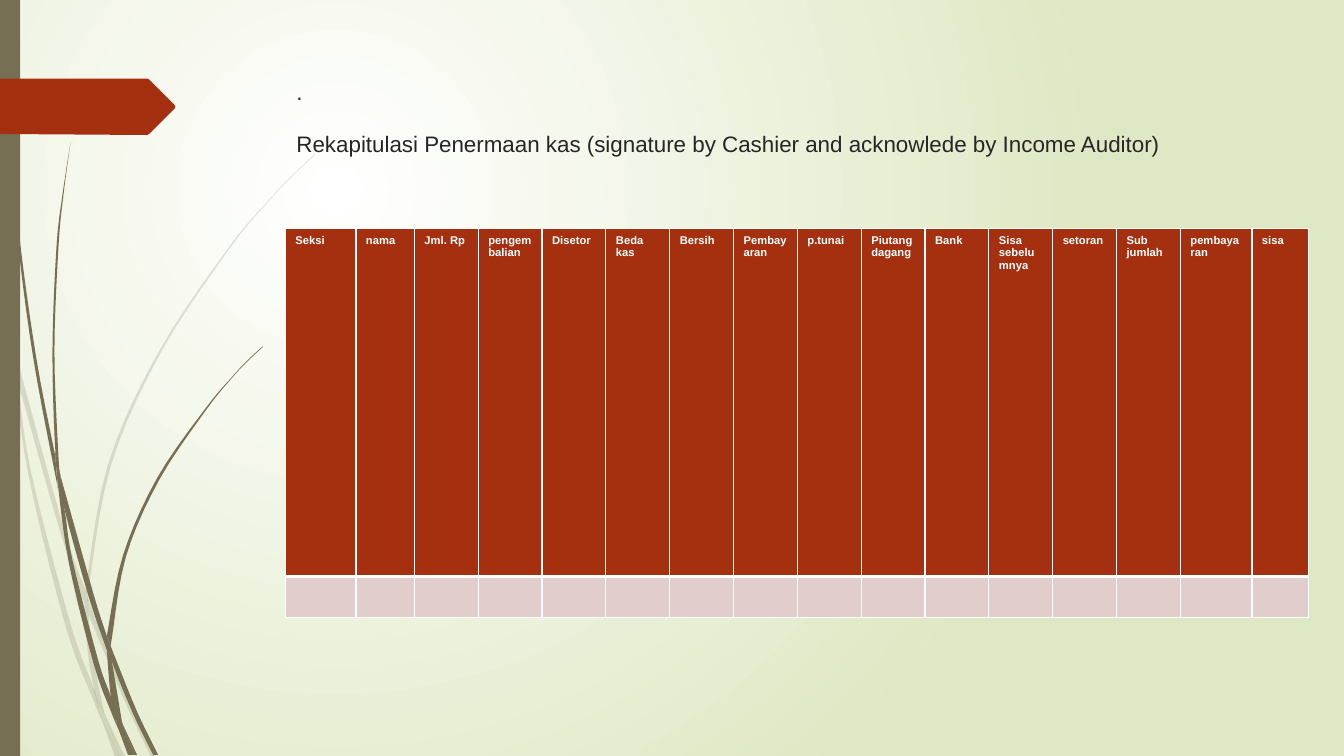
import pptx
import pptx.util
import pptx.dml.color
import pptx.enum.shapes
import pptx.enum.text
import pptx.oxml
import pptx.oxml.ns

Inches = pptx.util.Inches
Pt = pptx.util.Pt
RGBColor = pptx.dml.color.RGBColor

WHITE = RGBColor(0xFF, 0xFF, 0xFF)
PALE_GREEN = RGBColor(0xDF, 0xE8, 0xC4)
OLIVE = RGBColor(0x76, 0x6F, 0x54)
RUST = RGBColor(0xA5, 0x30, 0x10)
PINK = RGBColor(0xE1, 0xCD, 0xCC)
INK = RGBColor(0x26, 0x26, 0x26)
DRAWING_NS = pptx.oxml.ns.nsdecls("a")

TITLE_LINES = [".", "Rekapitulasi Penermaan kas (signature by Cashier and acknowlede by Income Auditor)"]
HEADINGS = ["Seksi", "nama", "Jml. Rp", "pengembalian", "Disetor", "Beda kas", "Bersih",
            "Pembayaran", "p.tunai", "Piutang dagang", "Bank", "Sisa sebelumnya",
            "setoran", "Sub jumlah", "pembayaran", "sisa"]
TABLE_WIDTH = 10.15
SPECIAL_WIDTHS = {0: 0.7, 1: 0.58, 14: 0.71, 15: 0.56}
ROW_HEIGHTS = [3.45, 0.41]

# Each blade part has two smooth edges that together close its outline
PALE_BLADES = [
    ([(0.11, 3.5), (0.09, 3.22), (0, 2.82)], [(0, 2.99), (0.1, 3.44), (0.11, 3.5)]),
    ([(0.84, 5.99), (0.58, 5.22), (0.17, 3.76)], [(0.14, 3.45), (0.62, 5.2), (0.85, 5.86)]),
    ([(0.88, 6.1), (1.23, 6.94), (1.5, 7.51)],
     [(1.55, 7.51), (1.27, 6.92), (0.92, 6.07), (0.88, 5.96)]),
    ([(1.19, 7.51), (1.24, 7.51)], [(1.05, 7.11), (1.19, 7.51)]),
    ([(0.11, 3.5), (0.28, 4.7), (0.65, 6.21), (0.92, 6.93), (1.01, 7.14)],
     [(0.99, 7.07), (0.93, 6.83), (0.7, 6.19), (0.31, 4.69), (0.17, 3.76), (0.11, 3.5)]),
    ([(0.84, 5.99), (0.87, 6.46), (0.93, 6.83), (0.96, 6.92), (1.05, 7.11)],
     [(1.03, 7.06), (0.91, 6.46), (0.88, 6.1), (0.84, 5.99)]),
    ([(0.88, 5.96), (0.88, 5.84), (1.1, 4.62), (1.6, 3.49), (2.29, 2.45), (2.68, 1.98),
      (2.9, 1.75), (3.12, 1.54)],
     [(3.12, 1.53), (2.89, 1.75), (2.68, 1.97), (2.28, 2.44), (1.58, 3.48), (1.07, 4.61),
      (0.85, 5.84), (0.85, 5.86)]),
    ([(1.01, 7.14), (1.14, 7.51)], [(1.19, 7.51), (1.01, 7.14)]),
    ([(0.88, 6.08), (0.88, 6.1), (0.88, 5.96)], [(0.85, 5.86), (0.84, 5.99)]),
    ([(0.96, 6.92), (0.93, 6.83), (0.99, 7.07), (1.01, 7.14), (1.19, 7.51)],
     [(1.19, 7.51), (1.05, 7.11), (0.96, 6.92)]),
]
DARK_BLADES = [
    ([(0.04, 0), (0.05, 0.48), (0.08, 1.09), (0.19, 2.32), (0.36, 3.55), (0.55, 4.53)],
     [(0.57, 4.81), (0.56, 4.77), (0.33, 3.55), (0.17, 2.33), (0.07, 1.1), (0.04, 0.48),
      (0.03, 0)]),
    ([(0.6, 4.72), (0.64, 5.05), (0.88, 5.92), (1.06, 6.45)],
     [(1.06, 6.31), (0.93, 5.9), (0.6, 4.72)]),
    ([(1.1, 6.41), (1.11, 6.56), (1.32, 7.08), (1.52, 7.49)],
     [(1.57, 7.49), (1.36, 7.06), (1.13, 6.49), (1.1, 6.41)]),
    ([(0.57, 4.77), (0.68, 5.57), (0.93, 6.59), (1.11, 7.08), (1.17, 7.22)],
     [(1.16, 7.17), (1.1, 6.91), (0.98, 6.57), (0.72, 5.56), (0.64, 5.05), (0.57, 4.77)]),
    ([(0.6, 4.72), (0.58, 4.53), (0.54, 3.49), (0.58, 2.45), (0.63, 1.93), (0.7, 1.41)],
     [(0.7, 1.41), (0.62, 1.93), (0.56, 2.45), (0.52, 3.49), (0.55, 4.49), (0.6, 4.72)]),
    ([(1.33, 7.49), (1.36, 7.49)], [(1.22, 7.19), (1.33, 7.49)]),
    ([(0.57, 4.77), (0.64, 5.05)], [(0.6, 4.72), (0.55, 4.49), (0.55, 4.53), (0.57, 4.77)]),
    ([(1.1, 6.41), (1.11, 6.33), (1.25, 5.52), (1.58, 4.76), (2.05, 4.06), (2.31, 3.74),
      (2.45, 3.59), (2.61, 3.44)],
     [(2.6, 3.44), (2.45, 3.58), (2.31, 3.73), (2.04, 4.05), (1.56, 4.74), (1.22, 5.51),
      (1.06, 6.31)]),
    ([(1.17, 7.22), (1.27, 7.49)], [(1.31, 7.49), (1.17, 7.22)]),
    ([(1.06, 6.45), (1.1, 6.91), (1.16, 7.06), (1.22, 7.19)],
     [(1.21, 7.16), (1.11, 6.56), (1.09, 6.51), (1.06, 6.45)]),
    ([(1.06, 6.45), (1.09, 6.51), (1.11, 6.56)], [(1.1, 6.41), (1.06, 6.31)]),
    ([(1.16, 7.06), (1.1, 6.91), (1.16, 7.17), (1.17, 7.22), (1.3, 7.49)],
     [(1.33, 7.49), (1.22, 7.19), (1.16, 7.06)]),
]
FLAG = [(0, 0.78), (1.46, 0.78), (1.48, 0.79), (1.73, 1.04), (1.74, 1.06),
        (1.73, 1.08), (1.48, 1.33), (1.46, 1.34), (0, 1.33)]


def set_format(target, values):
    for name, value in values.items():
        setattr(target, name, value)


def set_font(font, color, values):
    set_format(font, {"name": "Arial", **values})
    font.color.rgb = color


def paint(shape, color):
    shape.shadow.inherit = False
    shape.fill.solid()
    shape.fill.fore_color.rgb = color
    shape.line.fill.background()


def smooth(knots, steps=5):
    """Return points on a curve that passes through all knots."""
    padded = [knots[0], *knots, knots[-1]]
    points = [knots[0]]
    for a, b, c, d in zip(padded, padded[1:], padded[2:], padded[3:]):
        for step in range(1, steps + 1):
            t = step / steps
            points.append(tuple(
                b[i] + 0.5 * t * (c[i] - a[i] + t * (2 * a[i] - 5 * b[i] + 4 * c[i] - d[i]
                                  + t * (3 * (b[i] - c[i]) + d[i] - a[i])))
                for i in (0, 1)))
    return points


def add_outline(shapes, points, color):
    start, *rest = [(Inches(x), Inches(y)) for x, y in points]
    builder = shapes.build_freeform(*start)
    builder.add_line_segments(rest, close=True)
    outline = builder.convert_to_shape()
    paint(outline, color)
    return outline


def add_blades(page, blades, opacity=None):
    group = page.shapes.add_group_shape()
    for first_edge, second_edge in blades:
        blade = add_outline(group.shapes, smooth(first_edge) + smooth(second_edge), OLIVE)
        if opacity:
            color = blade.fill._xPr.find(".//" + pptx.oxml.ns.qn("a:srgbClr"))
            color.append(pptx.oxml.parse_xml(f'<a:alpha {DRAWING_NS} val="{opacity * 1000}"/>'))


def set_background(page):
    fill = page.background.fill
    fill.gradient()
    for stop, color in zip(fill.gradient_stops, (WHITE, PALE_GREEN)):
        stop.color.rgb = color
    linear = page.element.find(".//" + pptx.oxml.ns.qn("a:lin"))
    linear.getparent().replace(linear, pptx.oxml.parse_xml(
        f'<a:path {DRAWING_NS} path="circle">'
        '<a:fillToRect l="50000" t="50000" r="100000" b="100000"/></a:path>'))


def set_title(page):
    title = page.shapes.title
    set_format(title, {"left": Inches(2.84), "top": Inches(0.68),
                       "width": Inches(9.75), "height": Inches(1.4)})
    frame = title.text_frame
    set_format(frame, {"word_wrap": True, "margin_top": Inches(0.09),
                       "auto_size": pptx.enum.text.MSO_AUTO_SIZE.NONE,
                       "vertical_anchor": pptx.enum.text.MSO_ANCHOR.TOP})
    frame.text = "\n".join(TITLE_LINES)
    for para in frame.paragraphs:
        para.alignment = pptx.enum.text.PP_ALIGN.LEFT
        set_font(para.runs[0].font, INK, {"size": Pt(16)})
    frame.paragraphs[1].space_before = Pt(18)
    title.element.getparent().append(title.element)


def format_cell(cell, color, bottom_width):
    properties = cell._tc.get_or_add_tcPr()
    for side, width in (("L", 1), ("R", 1), ("T", 1), ("B", bottom_width)):
        properties.append(pptx.oxml.parse_xml(
            f'<a:ln{side} {DRAWING_NS} w="{Pt(width)}"><a:solidFill>'
            f'<a:srgbClr val="{WHITE}"/></a:solidFill></a:ln{side}>'))
    cell.fill.solid()
    cell.fill.fore_color.rgb = color


def add_cash_table(page):
    table = page.shapes.add_table(2, len(HEADINGS), Inches(2.83), Inches(2.27),
                                  Inches(TABLE_WIDTH), Inches(sum(ROW_HEIGHTS))).table
    regular_width = ((TABLE_WIDTH - sum(SPECIAL_WIDTHS.values()))
                     / (len(HEADINGS) - len(SPECIAL_WIDTHS)))
    for row, height in zip(table.rows, ROW_HEIGHTS):
        row.height = Inches(height)
    for index, heading in enumerate(HEADINGS):
        table.columns[index].width = Inches(SPECIAL_WIDTHS.get(index, regular_width))
        header = table.cell(0, index)
        header.text = heading
        set_font(header.text_frame.paragraphs[0].runs[0].font, WHITE,
                 {"size": Pt(8), "bold": True})
        format_cell(header, RUST, 3)
        format_cell(table.cell(1, index), PINK, 1)


def main():
    deck = pptx.Presentation()
    set_format(deck, {"slide_width": Inches(13.33), "slide_height": Inches(7.5)})
    page = deck.slides.add_slide(deck.slide_layouts[5])
    set_background(page)

    # Decoration on the left
    add_blades(page, PALE_BLADES, opacity=20)
    add_blades(page, DARK_BLADES)
    stripe = page.shapes.add_shape(pptx.enum.shapes.MSO_SHAPE.RECTANGLE,
                                   0, 0, Inches(0.2), Inches(7.5))
    paint(stripe, OLIVE)
    add_outline(page.shapes, FLAG, RUST)

    # Content
    set_title(page)
    add_cash_table(page)
    deck.save("out.pptx")


if __name__ == "__main__":
    main()
